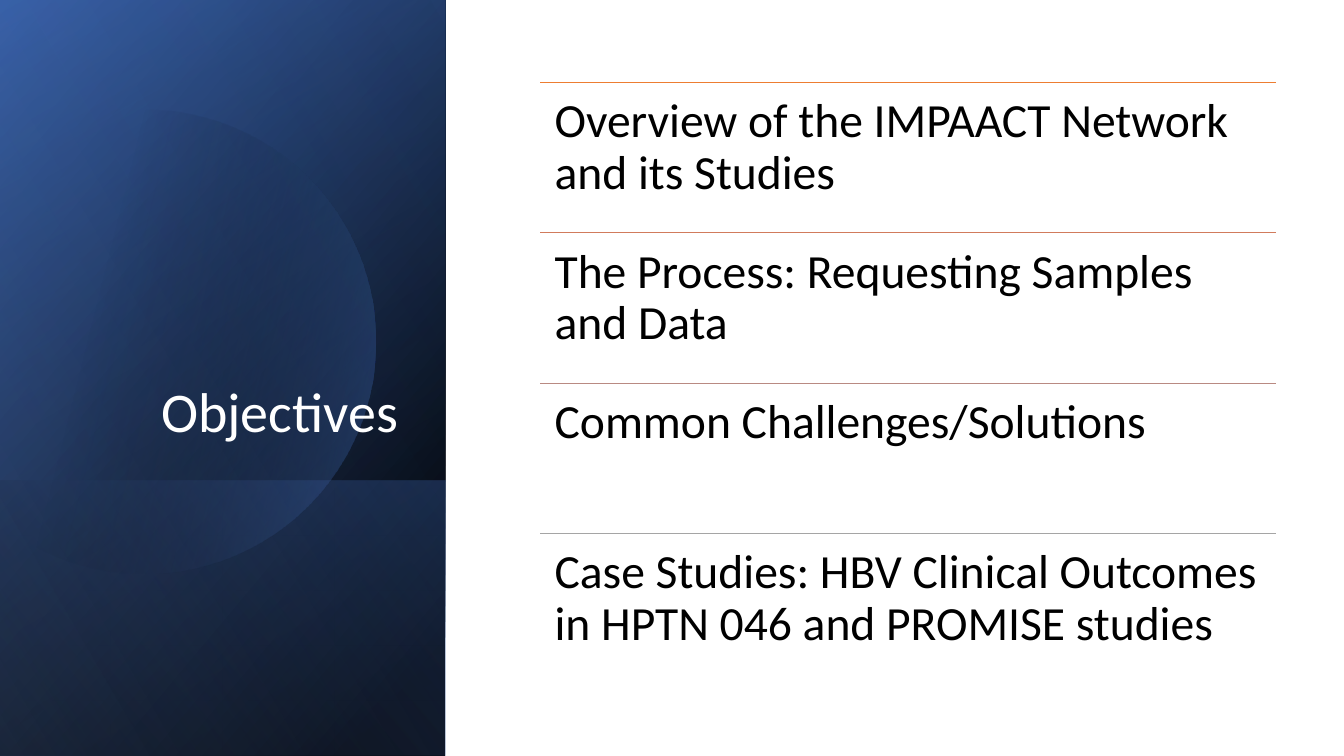
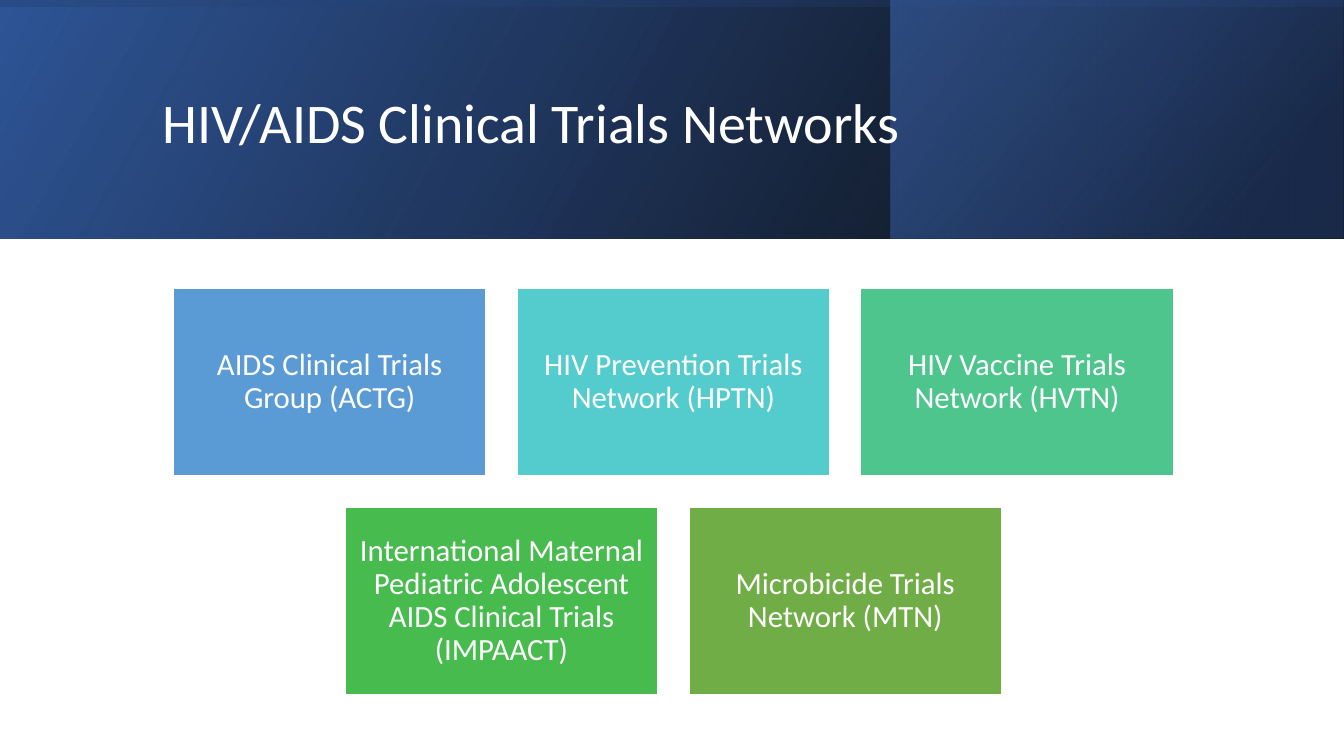
"""Build the objectives and clinical trials networks slides."""
from dataclasses import dataclass
from math import cos, radians, sin
from typing import NamedTuple

from pptx import Presentation
from pptx.dml.color import RGBColor
from pptx.enum.shapes import MSO_CONNECTOR, MSO_SHAPE
from pptx.enum.text import MSO_ANCHOR, MSO_AUTO_SIZE, PP_ALIGN
from pptx.oxml import parse_xml
from pptx.oxml.ns import nsdecls, qn
from pptx.oxml.xmlchemy import OxmlElement
from pptx.util import Pt

FONT = "Calibri"
BLACK = RGBColor(0x00, 0x00, 0x00)
WHITE = RGBColor(0xFF, 0xFF, 0xFF)
NAVY = RGBColor(0x20, 0x38, 0x64)
DARK_BLUE = RGBColor(0x2F, 0x55, 0x97)
BLUE = RGBColor(0x44, 0x72, 0xC4)
PALE_BLUE = RGBColor(0x8F, 0xAA, 0xDC)
ORANGE = RGBColor(0xED, 0x7D, 0x31)
COPPER = RGBColor(0xD1, 0x7B, 0x5C)
ROSE_GRAY = RGBColor(0xB9, 0x8A, 0x82)
GRAY = RGBColor(0xA5, 0xA5, 0xA5)
SKY = RGBColor(0x5B, 0x9B, 0xD5)
AQUA = RGBColor(0x54, 0xCC, 0xCD)
MINT = RGBColor(0x4D, 0xC5, 0x8D)
GREEN = RGBColor(0x48, 0xBB, 0x4F)
OLIVE = RGBColor(0x70, 0xAD, 0x47)

SLIDE_WIDTH, SLIDE_HEIGHT = 960, 540
PANEL_WIDTH = 318
PANEL_FOOT_TOP = 343
BANNER_HEIGHT = 170.6
BANNER_ACCENT_LEFT = 636.5


class Box(NamedTuple):
    """Left, top, width and height in points."""
    left: float
    top: float
    width: float
    height: float

    def lengths(self) -> list:
        """Return the box as slide lengths."""
        return [Pt(value) for value in self]


class Stop(NamedTuple):
    """One gradient stop, with position and opacity in percent."""
    position: int
    color: RGBColor
    opacity: int = 100


@dataclass(frozen=True)
class Band:
    """A rectangle filled with a linear gradient."""
    box: Box
    angle: int
    stops: tuple[Stop, ...]


@dataclass(frozen=True)
class Entry:
    """A text with its own colour."""
    text: str
    color: RGBColor


PANEL = Box(0, 0, PANEL_WIDTH, SLIDE_HEIGHT)
PANEL_FOOT = Box(0, PANEL_FOOT_TOP, PANEL_WIDTH, SLIDE_HEIGHT - PANEL_FOOT_TOP)
BANNER = Box(0, 0, SLIDE_WIDTH, BANNER_HEIGHT)
BANNER_ACCENT = Box(BANNER_ACCENT_LEFT, 0, SLIDE_WIDTH - BANNER_ACCENT_LEFT, BANNER_HEIGHT)

PANEL_BANDS = (
    Band(PANEL, 220, (Stop(8, BLACK), Stop(100, DARK_BLUE))),
    Band(PANEL, 240, (Stop(0, BLACK, 0), Stop(99, BLUE, 46))),
    Band(PANEL_FOOT, 140, (Stop(2, BLUE, 29), Stop(100, BLACK, 30))),
)
DISC_STOPS = (Stop(29, BLACK, 0), Stop(100, BLUE, 43))
PANEL_SHEEN = Band(PANEL, 150, (Stop(0, BLACK, 0), Stop(99, PALE_BLUE, 11)))
BANNER_BANDS = (
    Band(BANNER, 210, (Stop(0, BLACK, 96), Stop(100, DARK_BLUE))),
    Band(BANNER_ACCENT, 220, (Stop(19, NAVY, 68), Stop(100, BLUE, 48))),
    Band(BANNER, 100, (Stop(23, DARK_BLUE, 16), Stop(99, BLACK, 45))),
)
OBJECTIVES = (
    Entry("Overview of the IMPAACT Network and its Studies", ORANGE),
    Entry("The Process: Requesting Samples and Data", COPPER),
    Entry("Common Challenges/Solutions", ROSE_GRAY),
    Entry("Case Studies: HBV Clinical Outcomes in HPTN 046 and PROMISE studies", GRAY),
)
NETWORK_ROWS = (
    (
        Entry("AIDS Clinical Trials Group (ACTG)", SKY),
        Entry("HIV Prevention Trials Network (HPTN)", AQUA),
        Entry("HIV Vaccine Trials Network (HVTN)", MINT),
    ),
    (
        Entry("International Maternal Pediatric Adolescent AIDS Clinical Trials (IMPAACT)", GREEN),
        Entry("Microbicide Trials Network (MTN)", OLIVE),
    ),
)


def write_text(shape, text: str, *, size: float, color: RGBColor = WHITE,
               align=PP_ALIGN.LEFT, anchor=MSO_ANCHOR.TOP, inset: float = 7.2) -> None:
    """Write one formatted paragraph into a shape."""
    frame = shape.text_frame
    frame.auto_size = MSO_AUTO_SIZE.NONE
    frame.word_wrap = True
    frame.vertical_anchor = anchor
    frame.margin_left = frame.margin_right = Pt(inset)
    frame.margin_top = frame.margin_bottom = Pt(min(inset, 3.6) if shape.is_placeholder else inset)
    frame.text = text
    paragraph = frame.paragraphs[0]
    paragraph.alignment = align
    paragraph.line_spacing = 0.9
    paragraph.space_before = Pt(0)
    font = paragraph.runs[0].font
    font.name, font.size = FONT, Pt(size)
    font.color.rgb = color


def fill_gradient(shape, angle: int, stops: tuple[Stop, ...]) -> None:
    """Give a shape a linear gradient, clockwise in degrees, and no outline."""
    shape.shadow.inherit = False
    shape.line.fill.background()
    shape.fill.background()
    stop_xml = "".join(
        f'<a:gs pos="{stop.position * 1000}"><a:srgbClr val="{stop.color}">'
        f'<a:alpha val="{stop.opacity * 1000}"/></a:srgbClr></a:gs>'
        for stop in stops
    )
    gradient = parse_xml(
        f'<a:gradFill {nsdecls("a")} rotWithShape="1"><a:gsLst>{stop_xml}</a:gsLst>'
        f'<a:lin ang="{angle * 60000}" scaled="0"/></a:gradFill>'
    )
    properties = shape._element.spPr
    properties.replace(properties.find(qn("a:noFill")), gradient)


def add_band(slide, band: Band) -> None:
    """Draw one gradient band."""
    shape = slide.shapes.add_shape(MSO_SHAPE.RECTANGLE, *band.box.lengths())
    fill_gradient(shape, band.angle, band.stops)


def add_disc(slide) -> None:
    """Draw the disc that the left slide edge cuts off."""
    center_x, center_y, radius, half_sweep = 103, 244, 165.5, 128
    points = [
        (Pt(max(0, center_x + radius * cos(radians(angle)))),
         Pt(center_y + radius * sin(radians(angle))))
        for angle in range(-half_sweep, half_sweep + 1, 2)
    ]
    builder = slide.shapes.build_freeform(*points[0])
    builder.add_line_segments(points[1:], close=True)
    fill_gradient(builder.convert_to_shape(), 14, DISC_STOPS)


def add_title(slide, text: str, box: Box, *, align, anchor) -> None:
    """Place the title placeholder in front of the bands."""
    title = slide.shapes.title
    slide.shapes._spTree.append(title._element)
    title.left, title.top, title.width, title.height = box.lengths()
    write_text(title, text, size=40, align=align, anchor=anchor)


def add_rule(slide, left: float, top: float, width: float, color: RGBColor) -> None:
    """Draw a thin horizontal line."""
    rule = slide.shapes.add_connector(
        MSO_CONNECTOR.STRAIGHT, Pt(left), Pt(top), Pt(left + width), Pt(top))
    rule.line.color.rgb = color
    rule.line.width = Pt(0.5)
    rule._element.spPr.append(OxmlElement("a:effectLst"))


def build_objectives(slide) -> None:
    """Build the slide with the side panel and the ruled list."""
    for band in PANEL_BANDS:
        add_band(slide, band)
    add_disc(slide)
    add_band(slide, PANEL_SHEEN)
    add_title(slide, "Objectives", Box(46, 132.5, 245.5, 188.5),
              align=PP_ALIGN.RIGHT, anchor=MSO_ANCHOR.BOTTOM)
    left, first_top, width, height = 386, 59, 525.2, 107.3
    for index, entry in enumerate(OBJECTIVES):
        top = first_top + index * height
        add_rule(slide, left, top, width, entry.color)
        text_box = slide.shapes.add_textbox(*Box(left, top, width, height).lengths())
        write_text(text_box, entry.text, size=34, color=BLACK, inset=10.2)


def build_networks(slide) -> None:
    """Build the slide with the banner and the centred rows of tiles."""
    for band in BANNER_BANDS:
        add_band(slide, band)
    add_title(slide, "HIV/AIDS Clinical Trials Networks", Box(108.7, 27.4, 765.4, 123.8),
              align=PP_ALIGN.LEFT, anchor=MSO_ANCHOR.MIDDLE)
    center, first_top, width, height, gap = 481, 206.2, 223.2, 133.9, 22.3
    for row_index, row in enumerate(NETWORK_ROWS):
        row_left = center - (len(row) * (width + gap) - gap) / 2
        top = first_top + row_index * (height + gap)
        for column, entry in enumerate(row):
            box = Box(row_left + column * (width + gap), top, width, height)
            tile = slide.shapes.add_shape(MSO_SHAPE.RECTANGLE, *box.lengths())
            tile.shadow.inherit = False
            tile.fill.solid()
            tile.fill.fore_color.rgb = entry.color
            tile.line.color.rgb = WHITE
            tile.line.width = Pt(1)
            write_text(tile, entry.text, size=22, align=PP_ALIGN.CENTER,
                       anchor=MSO_ANCHOR.MIDDLE, inset=6.6)


def main() -> None:
    """Create and save the presentation."""
    presentation = Presentation()
    presentation.slide_width, presentation.slide_height = Pt(SLIDE_WIDTH), Pt(SLIDE_HEIGHT)
    title_only = presentation.slide_layouts[5]
    for build in (build_objectives, build_networks):
        build(presentation.slides.add_slide(title_only))
    presentation.save("out.pptx")


if __name__ == "__main__":
    main()
